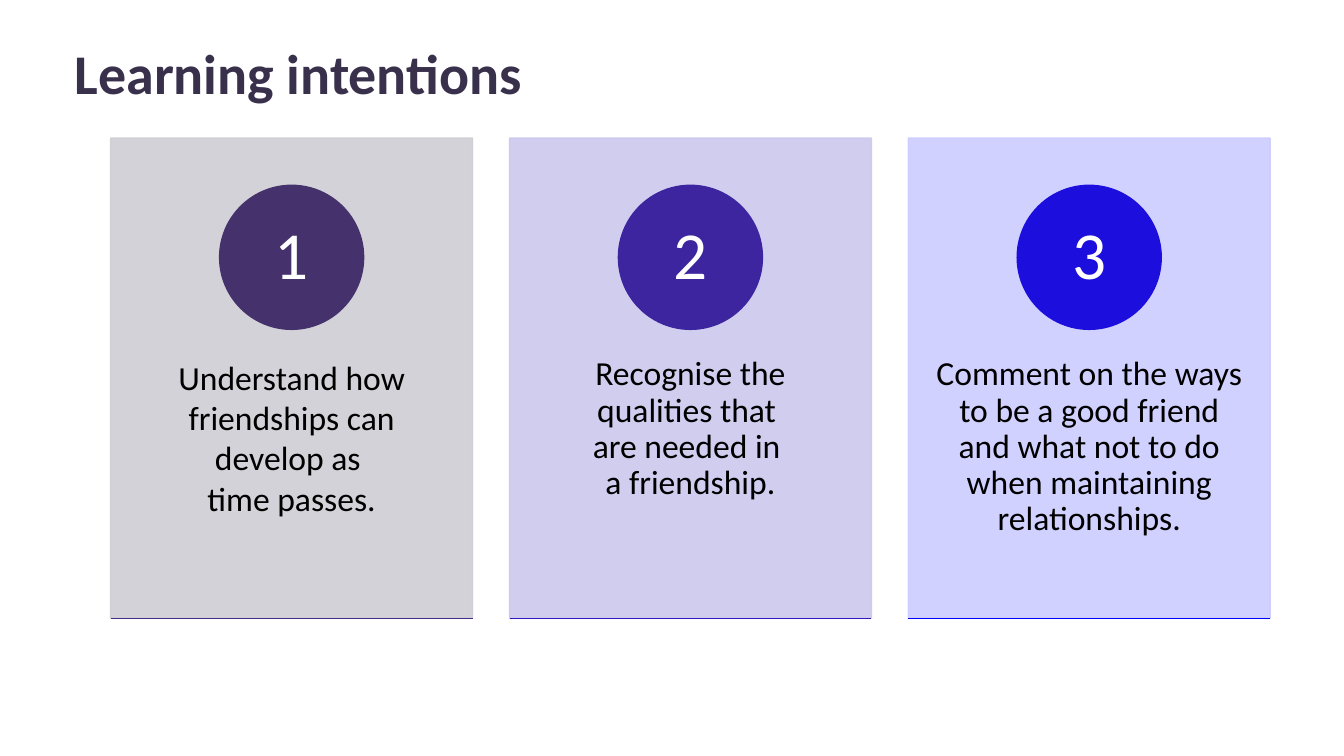
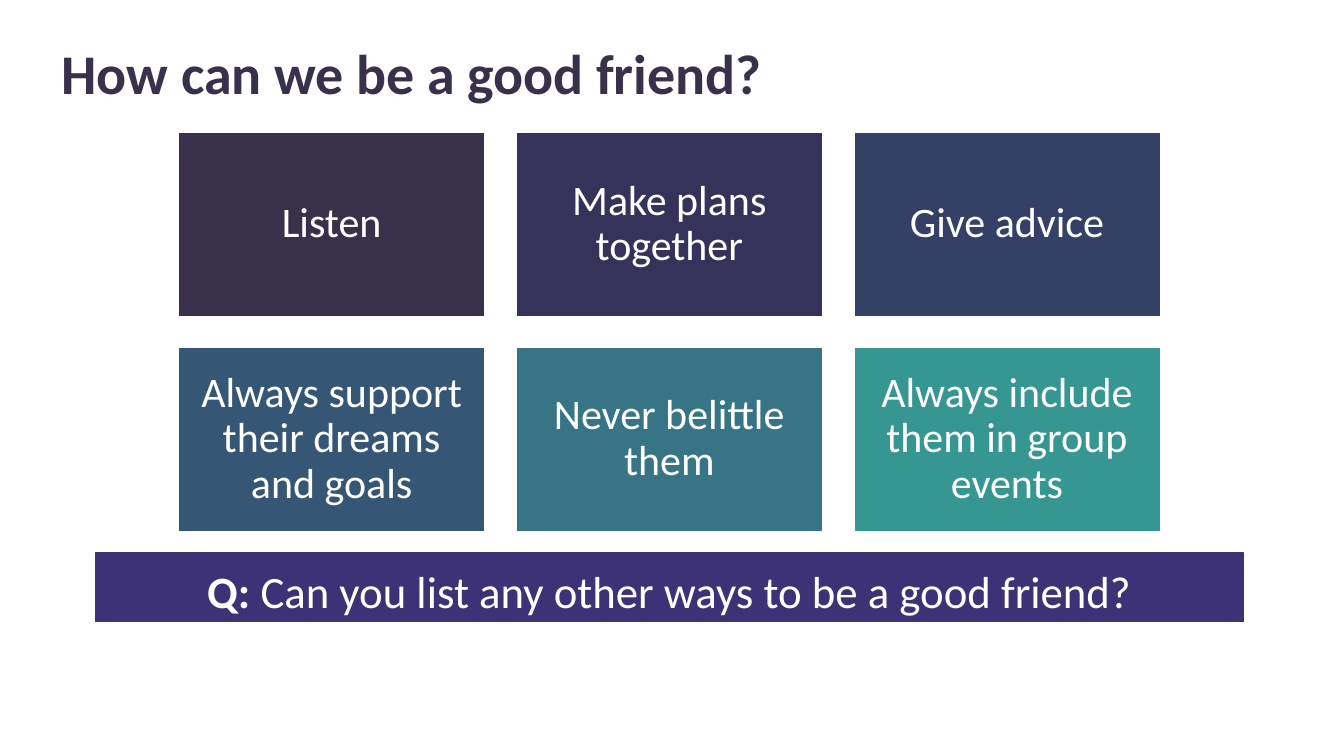
from dataclasses import dataclass

from lxml.etree import SubElement
from pptx import Presentation
from pptx.dml.color import RGBColor as Rgb
from pptx.enum.shapes import MSO_CONNECTOR as Link, MSO_SHAPE as Kind
from pptx.enum.text import MSO_ANCHOR as Anchor, MSO_AUTO_SIZE as Fit, PP_ALIGN as Align
from pptx.oxml.ns import qn
from pptx.util import Cm, Pt


@dataclass(frozen=True)
class Theme:
    font: str = "Calibri"
    ink: str = "39304C"
    black: str = "000000"
    white: str = "FFFFFF"
    bar: str = "3E3276"
    edge: str = "45326C"
    title: int = 40
    digit: int = 48
    card: int = 24
    tile: int = 30
    ask: int = 32


theme = Theme()
deck = Presentation()
deck.slide_width, deck.slide_height = Cm(33.87), Cm(19.05)


def begin(text, left):
    slide = deck.slides.add_slide(deck.slide_layouts[5])
    title = slide.shapes.title
    title.left, title.top, title.width, title.height = Cm(left), Cm(1.02), Cm(29), Cm(1.8)
    frame = title.text_frame
    frame.text = text
    frame.auto_size = Fit.NONE
    frame.vertical_anchor = Anchor.MIDDLE
    para = frame.paragraphs[0]
    para.alignment, para.line_spacing = Align.LEFT, 0.9
    font = para.font
    font.name, font.size, font.bold = theme.font, Pt(theme.title), True
    font.color.rgb = Rgb.from_string(theme.ink)
    return slide


def block(slide, kind, place, fill, edge, text, size, color, pad, space=0.9):
    shape = slide.shapes.add_shape(kind, *map(Cm, place))
    shape.shadow.inherit = False
    shape.fill.solid()
    shape.fill.fore_color.rgb = Rgb.from_string(fill)
    shape.line.color.rgb = Rgb.from_string(edge)
    shape.line.width = Pt(1)
    frame = shape.text_frame
    frame.word_wrap = True
    frame.vertical_anchor = Anchor.MIDDLE
    frame.margin_left = frame.margin_right = Cm(pad[0])
    frame.margin_top = frame.margin_bottom = Cm(pad[1])
    frame.text = text
    para = frame.paragraphs[0]
    para.alignment, para.line_spacing = Align.CENTER, space
    font = para.font
    font.name, font.size = theme.font, Pt(size)
    font.color.rgb = Rgb.from_string(color)
    return shape


slide = begin("Learning intentions", 1.63)
cards = [
    ("CFCED4", "45326C", "442D84", 1.0,
     "Understand how friendships can develop as \vtime passes."),
    ("CCC8EE", "3D259F", "311BBD", 0.9,
     "Recognise the qualities that \vare needed in \va friendship."),
    ("CCCCFF", "1C0FDD", "0000FF", 0.9,
     "Comment on the ways to be a good friend and what not to do when maintaining relationships."),
]
wide, high, disc = 9.12, 12.1, 3.63
top = 3.48
for i, (pale, deep, rule, space, text) in enumerate(cards):
    left = 2.79 + i * 10.05
    card = block(slide, Kind.RECTANGLE, (left, top, wide, high), pale, pale,
                 text, theme.card, theme.black, (0.71, 0.91), space)
    card.text_frame.vertical_anchor = Anchor.TOP
    card.text_frame.margin_top = Cm(5.51)
    for tint in card.element.spPr.iter(qn("a:srgbClr")):
        SubElement(tint, qn("a:alpha"), val="90000")
    block(slide, Kind.OVAL, (left + (wide - disc) / 2, 4.67, disc, disc), deep, deep,
          str(i + 1), theme.digit, theme.white, (0.28, 0.03))
    line = slide.shapes.add_connector(
        Link.STRAIGHT, Cm(left), Cm(top + high), Cm(left + wide), Cm(top + high))
    line.line.color.rgb = Rgb.from_string(rule)
    line.line.width = Pt(1)
    SubElement(line.element.spPr, qn("a:effectLst"))

slide = begin("How can we be a good friend?", 1.3)
tiles = [
    ("39304C", "Listen"),
    ("353359", "Make plans together"),
    ("354067", "Give advice"),
    ("365676", "Always support their dreams and goals"),
    ("367486", "Never belittle them"),
    ("369691", "Always include them in group events"),
]
for i, (fill, text) in enumerate(tiles):
    row, col = divmod(i, 3)
    place = (4.5 + col * 8.51, 3.33 + row * 5.41, 7.72, 4.65)
    block(slide, Kind.RECTANGLE, place, fill, theme.white,
          text, theme.tile, theme.white, (0.3, 0.3))

bar = block(slide, Kind.RECTANGLE, (2.41, 13.94, 28.93, 1.73), theme.bar, theme.edge,
            "Q: ", theme.ask, theme.white, (0.25, 0.13), 1.1)
para = bar.text_frame.paragraphs[0]
para.runs[0].font.bold = True
para.add_run().text = "Can you list any other ways to be a good friend?"

deck.save("out.pptx")
